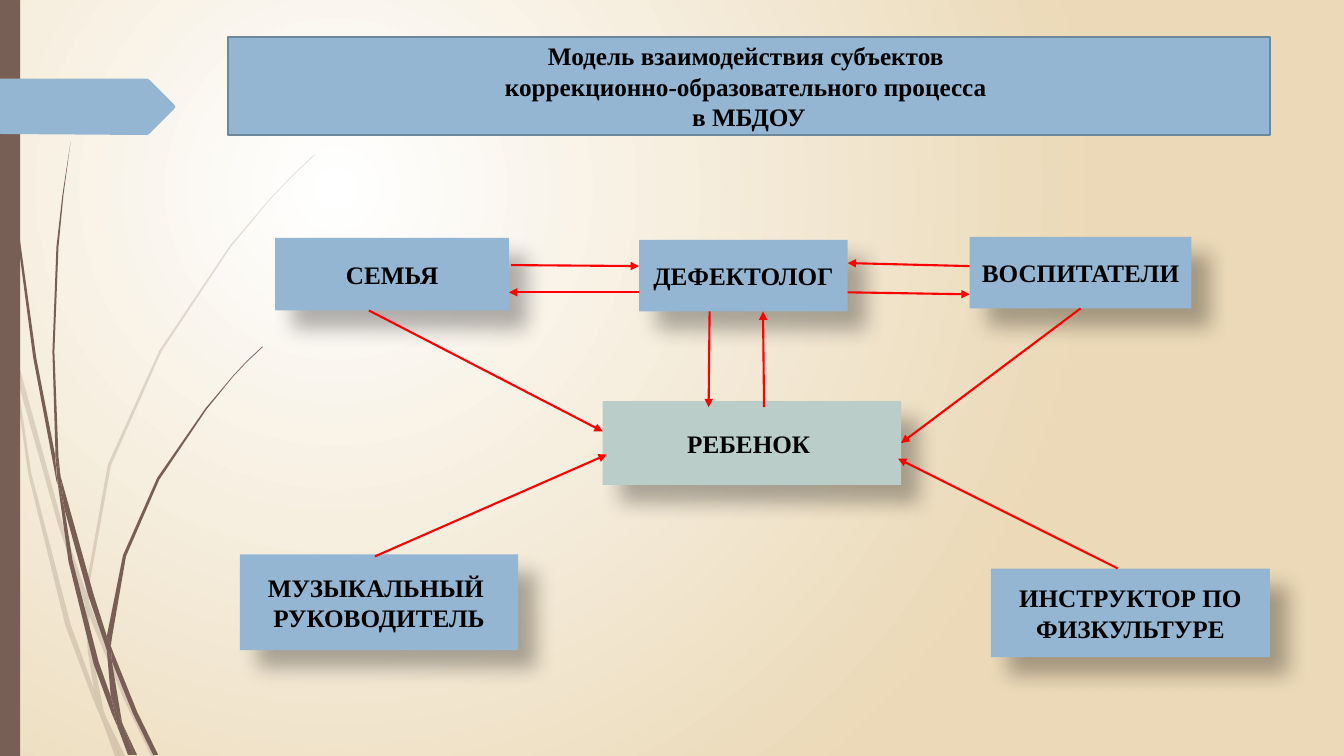
from lxml import etree
from pptx import Presentation
from pptx.dml.color import RGBColor
from pptx.enum.shapes import MSO_CONNECTOR as Link, MSO_SHAPE as Preset
from pptx.enum.text import MSO_ANCHOR as Anchor, PP_ALIGN as Align
from pptx.oxml import parse_xml
from pptx.oxml.ns import nsdecls, qn
from pptx.util import Inches, Pt

BLUE = RGBColor(0x94, 0xB6, 0xD2)
SAGE = RGBColor(0xBA, 0xCD, 0xC8)
BROWN = RGBColor(0x77, 0x5F, 0x55)
STEEL = RGBColor(0x6D, 0x87, 0x9B)
RED = RGBColor(0xFF, 0, 0)
BLACK = RGBColor(0, 0, 0)
FONT = "Times New Roman"
WIDTH, HEIGHT = 40 / 3, 7.5

# Content: title, boxes (left, top, width, height), arrows (from, to)
TITLE = ["Модель взаимодействия субъектов ",
         "коррекционно-образовательного процесса ",
         "в МБДОУ"]
TITLE_AT = (2.26, 0.37, 10.34, 0.97)
BOXES = [
    ("СЕМЬЯ", (2.73, 2.36, 2.32, 0.72), BLUE),
    ("ДЕФЕКТОЛОГ", (6.34, 2.38, 2.07, 0.71), BLUE),
    ("ВОСПИТАТЕЛИ", (9.62, 2.35, 2.2, 0.71), BLUE),
    ("РЕБЕНОК ", (5.98, 3.98, 2.96, 0.83), SAGE),
    ("МУЗЫКАЛЬНЫЙ  РУКОВОДИТЕЛЬ", (2.38, 5.5, 2.76, 0.95), BLUE),
    ("ИНСТРУКТОР ПО ФИЗКУЛЬТУРЕ", (9.83, 5.64, 2.77, 0.88), BLUE),
]
ARROWS = [
    ((5.07, 2.63), (6.34, 2.64)), ((3.72, 5.52), (6.02, 4.51)),
    ((11.09, 5.64), (8.91, 4.55)), ((9.62, 2.64), (8.41, 2.61)),
    ((3.66, 3.08), (5.98, 4.28)), ((7.04, 3.09), (7.03, 4.04)),
    ((7.58, 4.04), (7.57, 3.09)), ((8.41, 2.9), (9.62, 2.92)),
    ((6.34, 2.9), (5.05, 2.9)),
]
JOINED = ("ВОСПИТАТЕЛИ", 2, "РЕБЕНОК ", 3)

# Grass: outline of each piece of a blade
PALE_GRASS = [
    [(.11, 3.5), (.09, 3.22), (0, 2.82), (0, 2.99), (.1, 3.44)],
    [(.58, 5.22), (.84, 5.99), (.85, 5.86), (.62, 5.2), (.14, 3.45), (.17, 3.76)],
    [(.92, 6.07), (.88, 5.96), (.88, 6.1), (1.23, 6.94), (1.5, 7.5), (1.55, 7.5),
     (1.27, 6.92)],
    [(1.19, 7.5), (1.24, 7.5), (1.05, 7.11)],
    [(.93, 6.83), (.7, 6.19), (.31, 4.69), (.17, 3.76), (.11, 3.5), (.28, 4.7),
     (.65, 6.21), (.92, 6.93), (1.01, 7.14), (.99, 7.07)],
    [(.84, 5.99), (.87, 6.46), (.93, 6.83), (.96, 6.92), (1.05, 7.11),
     (1.03, 7.06), (.91, 6.46), (.88, 6.1), (.88, 6.08)],
    [(.88, 5.84), (1.1, 4.62), (1.6, 3.49), (2.29, 2.45), (2.68, 1.98),
     (2.9, 1.75), (3.12, 1.54), (3.12, 1.53), (2.89, 1.75), (2.68, 1.97),
     (2.28, 2.44), (1.58, 3.48), (1.07, 4.61), (.85, 5.84), (.85, 5.86),
     (.88, 5.96)],
    [(1.01, 7.14), (1.14, 7.5), (1.19, 7.5)],
    [(.88, 6.08), (.88, 6.1), (.88, 5.96), (.85, 5.86), (.84, 5.99)],
    [(.96, 6.92), (.93, 6.83), (.99, 7.07), (1.01, 7.14), (1.19, 7.5),
     (1.05, 7.11)],
]
DARK_GRASS = [
    [(.07, 1.1), (.17, 2.33), (.33, 3.55), (.56, 4.77), (.57, 4.81), (.55, 4.57),
     (.55, 4.53), (.36, 3.55), (.19, 2.32), (.08, 1.09), (.05, .48), (.04, 0),
     (.03, 0), (.04, .48)],
    [(.88, 5.92), (1.06, 6.45), (1.06, 6.33), (1.06, 6.31), (.93, 5.9),
     (.6, 4.72), (.64, 5.05)],
    [(1.13, 6.49), (1.1, 6.41), (1.11, 6.56), (1.32, 7.08), (1.52, 7.49),
     (1.57, 7.49), (1.36, 7.06)],
    [(1.1, 6.91), (.98, 6.57), (.72, 5.56), (.64, 5.05), (.57, 4.77),
     (.68, 5.57), (.93, 6.59), (1.11, 7.08), (1.17, 7.22), (1.16, 7.17)],
    [(.6, 4.72), (.58, 4.53), (.54, 3.49), (.58, 2.45), (.63, 1.93), (.7, 1.41),
     (.62, 1.93), (.56, 2.45), (.52, 3.49), (.55, 4.49)],
    [(1.33, 7.49), (1.36, 7.49), (1.22, 7.19)],
    [(.57, 4.77), (.64, 5.05), (.6, 4.72), (.55, 4.49), (.55, 4.53)],
    [(1.11, 6.33), (1.25, 5.52), (1.58, 4.76), (2.05, 4.06), (2.31, 3.74),
     (2.45, 3.59), (2.61, 3.44), (2.6, 3.44), (2.45, 3.58), (2.31, 3.73),
     (2.04, 4.05), (1.56, 4.74), (1.22, 5.51), (1.06, 6.31), (1.1, 6.41)],
    [(1.17, 7.22), (1.27, 7.49), (1.31, 7.49)],
    [(1.06, 6.45), (1.1, 6.91), (1.16, 7.06), (1.22, 7.19), (1.21, 7.16),
     (1.11, 6.56), (1.09, 6.51)],
    [(1.06, 6.45), (1.09, 6.51), (1.11, 6.56), (1.1, 6.41), (1.06, 6.31),
     (1.06, 6.33)],
    [(1.16, 7.06), (1.1, 6.91), (1.16, 7.17), (1.17, 7.22), (1.3, 7.49),
     (1.33, 7.49), (1.22, 7.19)],
]
POINTER = [(0, .78), (1.46, .78), (1.48, .79), (1.73, 1.04), (1.74, 1.06),
           (1.73, 1.08), (1.48, 1.33), (1.46, 1.34), (0, 1.33)]


def paint(shape, fill):
    shape.shadow.inherit = False
    shape.fill.solid()
    shape.fill.fore_color.rgb = fill
    shape.line.fill.background()


def add_outline(points, fill, opacity=100):
    corners = [(Inches(x), Inches(y)) for x, y in points]
    builder = page.shapes.build_freeform(*corners[0])
    builder.add_line_segments(corners[1:], close=True)
    piece = builder.convert_to_shape()
    paint(piece, fill)
    if opacity < 100:
        color = piece.fill._xPr.find(qn("a:solidFill"))[0]
        etree.SubElement(color, qn("a:alpha")).set("val", str(opacity * 1000))


def add_block(place, fill):
    block = page.shapes.add_shape(Preset.RECTANGLE, *map(Inches, place))
    paint(block, fill)
    return block


def write(shape, lines, size=18, color=BLACK, bold=True, font=FONT):
    frame = shape.text_frame
    frame.word_wrap = True
    frame.vertical_anchor = Anchor.MIDDLE
    for i, line in enumerate(lines):
        para = frame.add_paragraph() if i else frame.paragraphs[0]
        para.alignment = Align.CENTER
        span = para.add_run()
        span.text = line
        span.font.size, span.font.bold = Pt(size), bold
        span.font.name, span.font.color.rgb = font, color


def cast_shadow(shape):
    effects = shape._element.spPr.find(qn("a:effectLst"))
    effects.append(parse_xml(
        f'<a:outerShdw {nsdecls("a")} blurRad="{Pt(15)}" dist="{Pt(18)}" '
        'dir="2700000" algn="ctr" rotWithShape="0"><a:srgbClr val="000000">'
        '<a:alpha val="30000"/></a:srgbClr></a:outerShdw>'))


def add_arrow(start, end):
    arrow = page.shapes.add_connector(Link.STRAIGHT, *map(Inches, start + end))
    arrow.line.color.rgb = RED
    arrow.line.width = Pt(1.5)
    etree.SubElement(arrow.line._get_or_add_ln(), qn("a:tailEnd")).set("type", "triangle")
    etree.SubElement(arrow._element.spPr, qn("a:effectLst"))
    return arrow


deck = Presentation()
deck.slide_width, deck.slide_height = Inches(WIDTH), Inches(HEIGHT)
page = deck.slides.add_slide(deck.slide_layouts[6])

# Background: white glow fading to sand
page.background.fill.gradient()
glow = page.background._cSld.bg.bgPr.find(qn("a:gradFill"))
glow.getparent().replace(glow, parse_xml(
    f'<a:gradFill {nsdecls("a")} rotWithShape="1"><a:gsLst>'
    '<a:gs pos="0"><a:srgbClr val="FFFFFF"/></a:gs>'
    '<a:gs pos="100000"><a:srgbClr val="EBD9B7"/></a:gs></a:gsLst>'
    '<a:path path="circle"><a:fillToRect l="50000" t="50000" r="100000" b="100000"/>'
    '</a:path></a:gradFill>'))

# Decoration on the left
for grass, opacity in ((PALE_GRASS, 20), (DARK_GRASS, 100)):
    for points in grass:
        add_outline(points, BROWN, opacity)
add_block((0, 0, 0.2, HEIGHT), BROWN)
add_outline(POINTER, BLUE)

# Title
heading = add_block(TITLE_AT, BLUE)
heading.line.color.rgb = STEEL
heading.line.width = Pt(1.25)
write(heading, TITLE)

# Participants
boxes = {}
for label, place, fill in BOXES:
    box = boxes[label] = add_block(place, fill)
    cast_shadow(box)
    write(box, [label])

# Links between participants
for start, end in ARROWS:
    add_arrow(start, end)
source, source_side, target, target_side = JOINED
joined = add_arrow((10.72, 3.06), (8.94, 4.39))
joined.begin_connect(boxes[source], source_side)
joined.end_connect(boxes[target], target_side)

deck.save("out.pptx")
